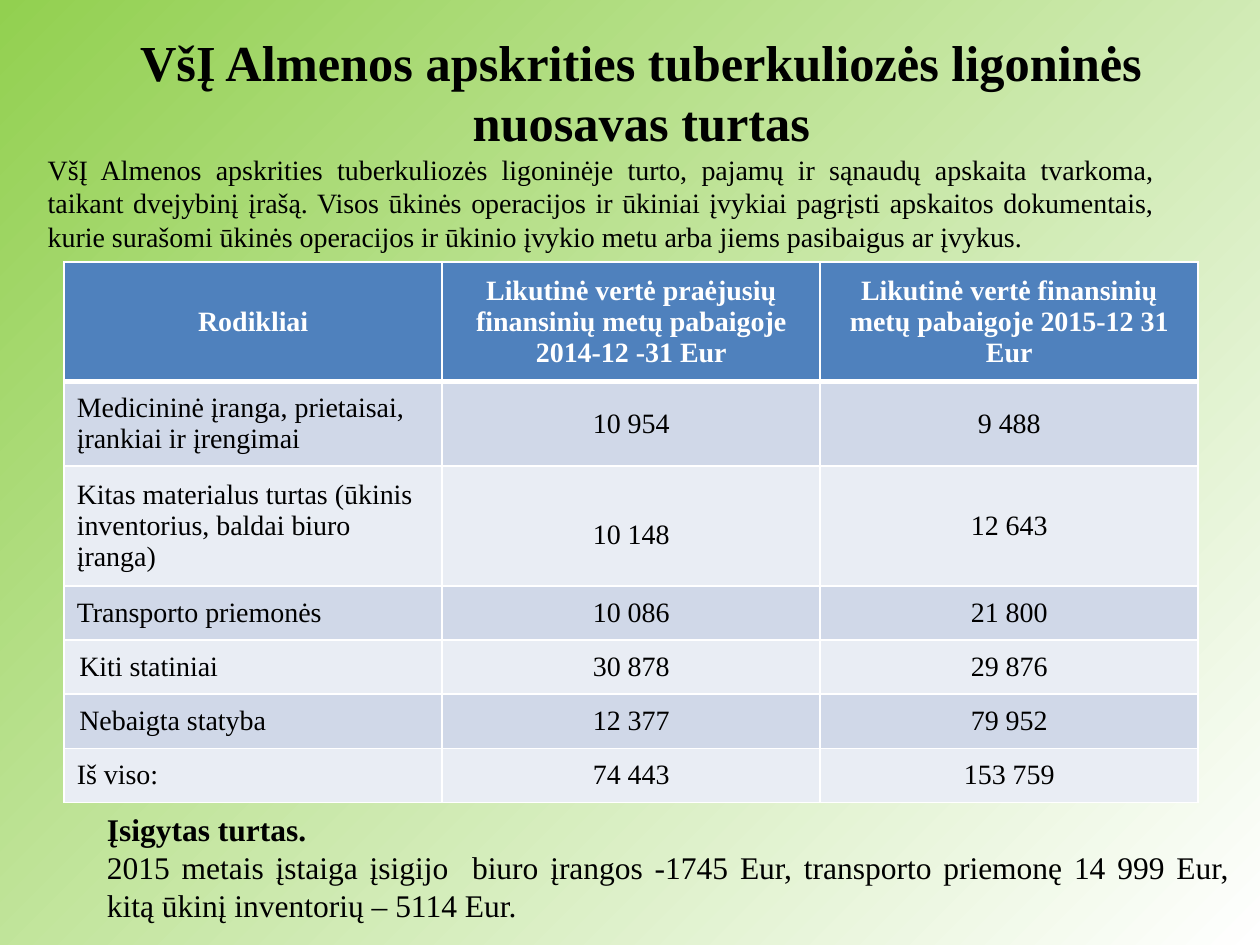
import pptx
import pptx.util
import pptx.dml.color
import pptx.enum.text
import pptx.oxml
import pptx.oxml.ns

Inches = pptx.util.Inches
ALIGN = pptx.enum.text.PP_ALIGN
ANCHOR = pptx.enum.text.MSO_ANCHOR

# Content
TITLE = "VšĮ Almenos apskrities tuberkuliozės ligoninės nuosavas turtas"
INTRO = ("VšĮ Almenos apskrities tuberkuliozės ligoninėje turto, pajamų ir sąnaudų "
         "apskaita tvarkoma, taikant dvejybinį įrašą. Visos ūkinės operacijos ir ūkiniai "
         "įvykiai pagrįsti apskaitos dokumentais, kurie surašomi ūkinės operacijos ir "
         "ūkinio įvykio metu arba jiems pasibaigus ar įvykus.")
ASSETS = [
    ("Rodikliai", "Likutinė vertė praėjusių finansinių metų pabaigoje 2014-12 -31 Eur",
     "Likutinė vertė finansinių metų pabaigoje 2015-12 31 Eur"),
    ("Medicininė įranga, prietaisai, įrankiai ir įrengimai", "10 954", "9 488"),
    ("Kitas materialus turtas (ūkinis inventorius, baldai biuro įranga)", "10 148", "12 643"),
    ("Transporto priemonės", "10 086", "21 800"),
    ("Kiti statiniai", "30 878", "29 876"),
    ("Nebaigta statyba", "12 377", "79 952"),
    ("Iš viso:", "74 443", "153 759"),
]
ROW_HEIGHTS = [0.95, 0.67, 0.95] + [0.43] * 4
INDENTED_ROWS = (4, 5)
LOWERED_CELL = (2, 1)
PURCHASES_HEADING = "Įsigytas turtas."
PURCHASES = ("2015 metais įstaiga įsigijo  biuro įrangos -1745 Eur, transporto priemonę "
             "14 999 Eur, kitą ūkinį inventorių – 5114 Eur.")

THEME = {
    "font": "Times New Roman", "text": "000000", "white": "FFFFFF", "green": "92D050",
    "header": "4F81BD", "bands": ("D0D8E8", "E9EDF4"),
    "title": 28.8, "body": 16, "note": 18,
}


def rgb(value):
    return pptx.dml.color.RGBColor.from_string(value)


def write(para, text, size=THEME["body"], color=THEME["text"], bold=False, align=ALIGN.LEFT):
    para.alignment = align
    span = para.add_run()
    span.text = text
    span.font.name = THEME["font"]
    span.font.size = pptx.util.Pt(size)
    span.font.bold = bold
    span.font.color.rgb = rgb(color)


def add_text_box(page, left, top, width, height):
    frame = page.shapes.add_textbox(*map(Inches, (left, top, width, height))).text_frame
    frame.word_wrap = True
    return frame


def set_borders(cell, bottom):
    """Insert the four edges ahead of the fill, as the schema requires."""
    properties = cell._tc.get_or_add_tcPr()
    for index, (edge, points) in enumerate((("L", 1), ("R", 1), ("T", 1), ("B", bottom))):
        properties.insert(index, pptx.oxml.parse_xml(
            f'<a:ln{edge} {pptx.oxml.ns.nsdecls("a")} w="{points * 12700}"><a:solidFill>'
            f'<a:srgbClr val="{THEME["white"]}"/></a:solidFill></a:ln{edge}>'))


deck = pptx.Presentation()
deck.slide_width, deck.slide_height = Inches(10), Inches(7.5)
page = deck.slides.add_slide(deck.slide_layouts[5])

# Background gradient
backdrop = page.background.fill
backdrop.gradient()
backdrop.gradient_angle = 315
for stop, name in zip(backdrop.gradient_stops, ("green", "white")):
    stop.color.rgb = rgb(THEME[name])

# Title
title = page.shapes.title
title.left, title.top, title.width, title.height = map(Inches, (0.59, 0.29, 9, 0.87))
title.text_frame.vertical_anchor = ANCHOR.MIDDLE
title.text_frame.auto_size = pptx.enum.text.MSO_AUTO_SIZE.NONE
write(title.text_frame.paragraphs[0], TITLE, size=THEME["title"], bold=True, align=ALIGN.CENTER)

# Asset table
table = page.shapes.add_table(len(ASSETS), 3, Inches(0.51), Inches(2.08),
                              Inches(9), Inches(sum(ROW_HEIGHTS))).table
for r, (values, height) in enumerate(zip(ASSETS, ROW_HEIGHTS)):
    table.rows[r].height = Inches(height)
    is_header = r == 0
    for c, value in enumerate(values):
        cell = table.cell(r, c)
        cell.fill.solid()
        cell.fill.fore_color.rgb = rgb(THEME["header"] if is_header else THEME["bands"][(r - 1) % 2])
        cell.vertical_anchor = ANCHOR.MIDDLE
        cell.margin_left = cell.margin_right = Inches(
            0.12 if is_header or (c == 0 and r in INDENTED_ROWS) else 0.1)
        cell.margin_top = cell.margin_bottom = 0
        if (r, c) == LOWERED_CELL:
            cell.vertical_anchor = ANCHOR.BOTTOM
            cell.margin_bottom = Inches(0.28)
        set_borders(cell, bottom=3 if is_header else 1)
        write(cell.text_frame.paragraphs[0], value, bold=is_header,
              color=THEME["white"] if is_header else THEME["text"],
              align=ALIGN.CENTER if is_header or c else ALIGN.LEFT)

# Accounting introduction
intro = add_text_box(page, 0.28, 1.16, 8.98, 0.91)
write(intro.paragraphs[0], INTRO, align=ALIGN.JUSTIFY)

# Purchases of the year
purchases = add_text_box(page, 0.75, 6.38, 9.11, 1.01)
write(purchases.paragraphs[0], PURCHASES_HEADING, size=THEME["note"], bold=True)
write(purchases.add_paragraph(), PURCHASES, size=THEME["note"], align=ALIGN.JUSTIFY)

deck.save("out.pptx")
